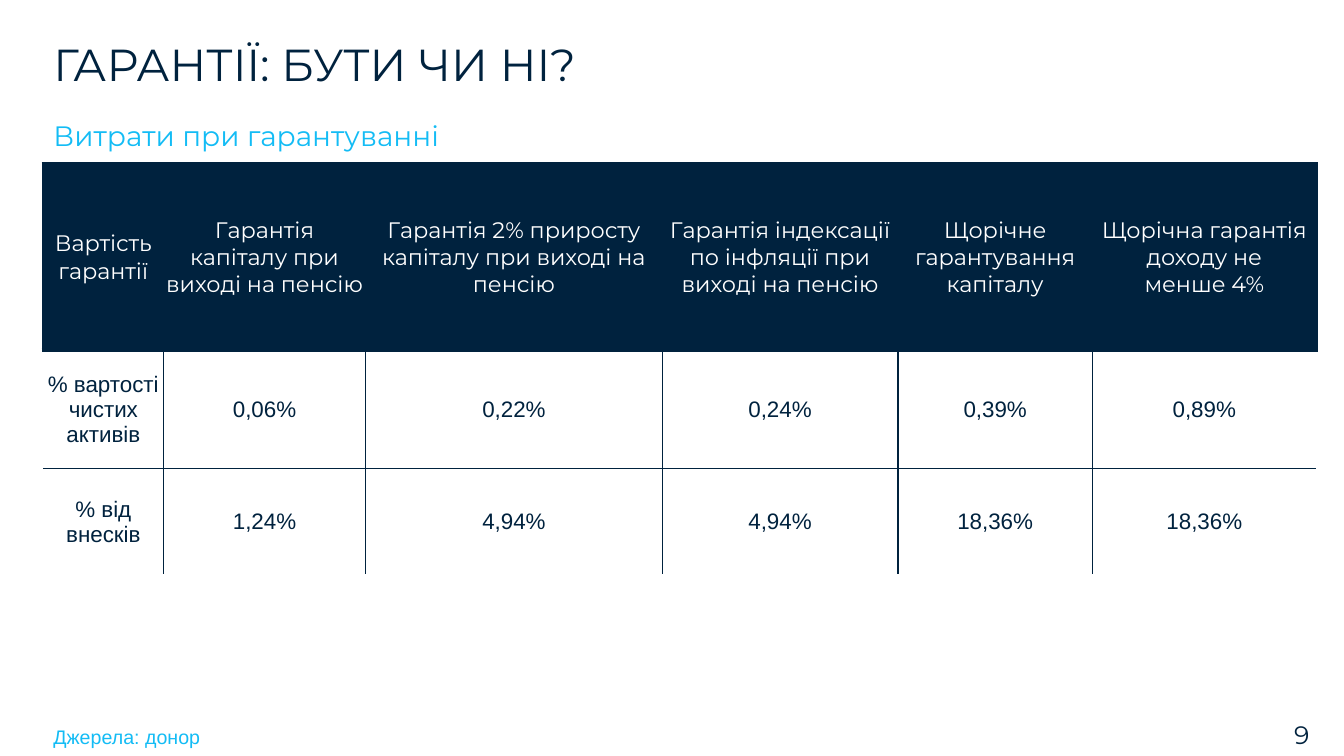
import pptx
import pptx.util
import pptx.dml.color
import pptx.enum.text
import pptx.oxml
import pptx.oxml.ns
from dataclasses import dataclass


@dataclass(frozen=True)
class Theme:
    navy: str = "00223E"
    sky: str = "13BCF5"
    white: str = "FFFFFF"
    display: str = "Montserrat"
    plain: str = "Arial"
    title: int = 32
    subtitle: int = 20
    number: int = 18
    cell: int = 16
    source: int = 14


theme = Theme()
deck = pptx.Presentation()
deck.slide_width = pptx.util.Inches(13.333)
deck.slide_height = pptx.util.Inches(7.5)
column = deck.slide_width / 100
row = deck.slide_height / 100
page = deck.slides.add_slide(deck.slide_layouts[5])


def write(para, text, size, font, colour, align):
    para.alignment = align
    span = para.add_run()
    span.text = text
    span.font.size = pptx.util.Pt(size)
    span.font.name = font
    span.font.bold = False
    span.font.color.rgb = pptx.dml.color.RGBColor.from_string(colour)


def add_border(cell, side, colour, width):
    paint = f'<a:solidFill><a:srgbClr val="{colour}"/></a:solidFill>' if colour else "<a:noFill/>"
    cell._tc.get_or_add_tcPr().append(pptx.oxml.parse_xml(
        f'<a:ln{side} {pptx.oxml.ns.nsdecls("a")} w="{pptx.util.Pt(width)}">{paint}</a:ln{side}>'))


left = 3.23
align = pptx.enum.text.PP_ALIGN
middle = pptx.enum.text.MSO_ANCHOR.MIDDLE

labels = [
    ("ГАРАНТІЇ: БУТИ ЧИ НІ?", left, 4.13, 80.4, 8.53, theme.title, theme.display, theme.navy),
    ("Витрати при гарантуванні", left, 15.07, 56.78, 5.87, theme.subtitle, theme.display, theme.sky),
    ("Джерела: донор", left, 95.2, 84, 4.53, theme.source, theme.plain, theme.sky),
    ("9", 95.55, 94.53, 2.33, 5.33, theme.number, theme.display, theme.navy),
]
for index, (text, x, y, width, height, size, font, colour) in enumerate(labels):
    box = page.shapes.title if index == 0 else page.shapes.add_textbox(0, 0, 0, 0)
    box.left, box.top = int(x * column), int(y * row)
    box.width, box.height = int(width * column), int(height * row)
    frame = box.text_frame
    frame.word_wrap = True
    frame.auto_size = pptx.enum.text.MSO_AUTO_SIZE.SHAPE_TO_FIT_TEXT
    frame.vertical_anchor = pptx.enum.text.MSO_ANCHOR.TOP
    write(frame.paragraphs[0], text, size, font, colour, align.LEFT)

costs = [
    ["Вартість гарантії", "Гарантія капіталу при виході на пенсію",
     "Гарантія 2% приросту капіталу при виході на пенсію",
     "Гарантія індексації\nпо інфляції при\nвиході на пенсію",
     "Щорічне гарантування капіталу", "Щорічна гарантія доходу не\nменше 4%"],
    ["% вартості чистих активів", "0,06%", "0,22%", "0,24%", "0,39%", "0,89%"],
    ["% від внесків", "1,24%", "4,94%", "4,94%", "18,36%", "18,36%"],
]
widths = [8.92, 15.07, 22.05, 17.55, 14.47, 16.65]
heights = [24.53, 15.73, 14]
table = page.shapes.add_table(
    len(heights), len(widths), int(left * column), int(21.73 * row),
    int(sum(widths) * column), int(sum(heights) * row)).table
for index, width in enumerate(widths):
    table.columns[index].width = int(width * column)
for index, height in enumerate(heights):
    table.rows[index].height = int(height * row)

last_row, last_column = len(heights) - 1, len(widths) - 1
for r, texts in enumerate(costs):
    header = r == 0
    for c, text in enumerate(texts):
        cell = table.cell(r, c)
        inner = theme.navy
        if header:
            borders = {side: (theme.navy, 3) for side in "LRTB"}
        else:
            borders = {
                "L": (inner if c > 0 else None, 1),
                "R": (inner if c < last_column else None, 1),
                "T": (inner, 3 if r == 1 else 1),
                "B": (inner if r < last_row else None, 1),
            }
        for side, (colour, width) in borders.items():
            add_border(cell, side, colour, width)
        cell.fill.solid()
        cell.fill.fore_color.rgb = pptx.dml.color.RGBColor.from_string(
            theme.navy if header else theme.white)
        cell.vertical_anchor = middle
        cell.margin_left = cell.margin_right = cell.margin_top = pptx.util.Inches(0.01)
        cell.margin_bottom = 0
        for index, line in enumerate(text.split("\n")):
            frame = cell.text_frame
            para = frame.add_paragraph() if index else frame.paragraphs[0]
            write(para, line, theme.cell, theme.display if header else theme.plain,
                  theme.white if header else theme.navy, align.CENTER)

deck.save("out.pptx")
